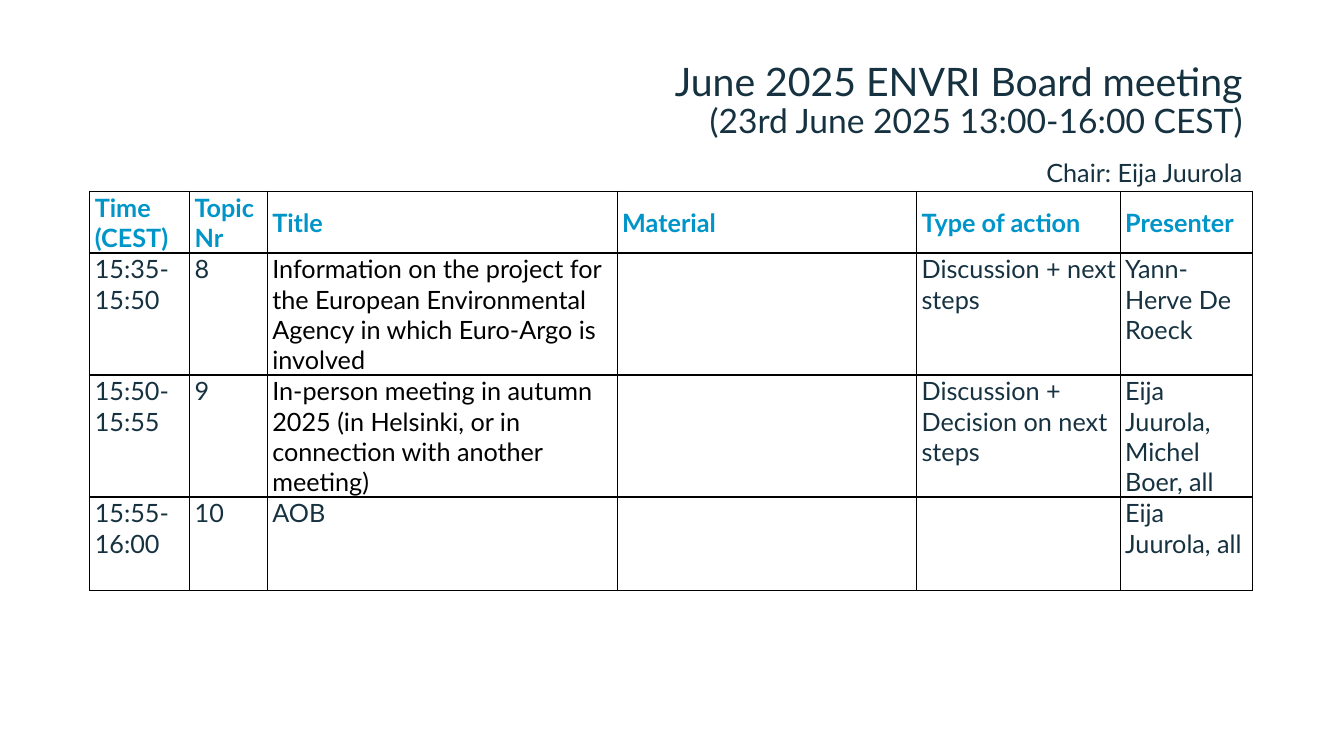
"""Build the agenda slide of the June 2025 board meeting."""
from typing import NamedTuple

import lxml.etree
import pptx
import pptx.dml.color
import pptx.enum.text
import pptx.oxml.ns
import pptx.util

SLIDE_WIDTH = pptx.util.Inches(13.33)
SLIDE_HEIGHT = pptx.util.Inches(7.5)
FONT = "Lato"
NAVY, BLUE, BLACK, WHITE = "163241", "0095C8", "000000", "FFFFFF"
TITLE_COLUMN = 2
COLUMN_SHARES = (7.43, 5.78, 26.03, 22.28, 15.15, 9.83)
ROW_SHARES = (7.73, 12.4, 12.4, 12.4)
BORDER_SIDES = ("a:lnL", "a:lnR", "a:lnT", "a:lnB")


class Heading(NamedTuple):
    left: float
    top: float
    width: float
    height: float
    text: str
    sizes: tuple[int, ...]
    line_spacing: float


class Topic(NamedTuple):
    time: str
    number: str
    title: str
    material: str
    action: str
    presenter: str
    title_color: str


HEADINGS = (
    Heading(28.96, 7.6, 64.22, 10.67,
            "June 2025 ENVRI Board meeting\v(23rd June 2025 13:00-16:00 CEST)",
            (28, 24), 0.9),
    Heading(68.42, 20.13, 24.76, 5.33, "Chair: Eija Juurola", (18,), 1.0),
)
TOPICS = (
    Topic("Time (CEST)", "Topic Nr", "Title", "Material", "Type of action",
          "Presenter", BLUE),
    Topic("15:35-15:50", "8",
          "Information on the project for the European Environmental Agency "
          "in which Euro-Argo is involved",
          "", "Discussion + next steps", "Yann-Herve De Roeck", BLACK),
    Topic("15:50-15:55", "9",
          "In-person meeting in autumn 2025 (in Helsinki, or in connection "
          "with another meeting)",
          "", "Discussion + Decision on next steps",
          "Eija Juurola, Michel Boer, all", BLACK),
    Topic("15:55-16:00", "10", "AOB", "", "", "Eija Juurola, all", NAVY),
)


def across(share: float) -> int:
    """Turn a percentage of the slide width into a length."""
    return round(SLIDE_WIDTH * share / 100)


def down(share: float) -> int:
    """Turn a percentage of the slide height into a length."""
    return round(SLIDE_HEIGHT * share / 100)


def rgb(value: str) -> pptx.dml.color.RGBColor:
    """Turn a hex string into a colour."""
    return pptx.dml.color.RGBColor.from_string(value)


def style_font(font, size: int, color: str, bold: bool = False) -> None:
    """Set the typeface, size, colour and weight of a font."""
    font.name = FONT
    font.size = pptx.util.Pt(size)
    font.bold = bold
    font.color.rgb = rgb(color)


def add_heading(page, heading: Heading) -> None:
    """Add a right-aligned text box with one size per line."""
    box = page.shapes.add_textbox(across(heading.left), down(heading.top),
                                  across(heading.width), down(heading.height))
    box.text_frame.word_wrap = True
    box.text_frame.text = heading.text
    para = box.text_frame.paragraphs[0]
    para.alignment = pptx.enum.text.PP_ALIGN.RIGHT
    para.line_spacing = heading.line_spacing
    for span, size in zip(para.runs, heading.sizes):
        style_font(span.font, size, NAVY)


def add_borders(cell) -> None:
    """Draw a thin black line on every side of a cell."""
    properties = cell._tc.get_or_add_tcPr()
    for side in BORDER_SIDES:
        line = lxml.etree.SubElement(properties, pptx.oxml.ns.qn(side),
                                     w=str(pptx.util.Pt(1)))
        fill = lxml.etree.SubElement(line, pptx.oxml.ns.qn("a:solidFill"))
        lxml.etree.SubElement(fill, pptx.oxml.ns.qn("a:srgbClr"), val=BLACK)


def fill_cell(cell, text: str, color: str, is_header: bool) -> None:
    """Write and format one cell of the agenda."""
    add_borders(cell)
    cell.fill.solid()
    cell.fill.fore_color.rgb = rgb(WHITE)
    cell.margin_left = cell.margin_right = pptx.util.Inches(0.01)
    cell.margin_top = pptx.util.Inches(0.01)
    cell.margin_bottom = 0
    anchor = pptx.enum.text.MSO_ANCHOR
    cell.vertical_anchor = anchor.MIDDLE if is_header else anchor.TOP
    cell.text_frame.text = text
    para = cell.text_frame.paragraphs[0]
    indents = para._p.get_or_add_pPr()
    indents.set("marL", str(pptx.util.Inches(0.04)))
    indents.set("indent", "0")
    style_font(para.font, 18, color, is_header)
    for span in para.runs:
        style_font(span.font, 18, color, is_header)


def add_agenda(page) -> None:
    """Add the agenda table with its header and topics."""
    table = page.shapes.add_table(
        len(TOPICS), len(COLUMN_SHARES), across(6.68), down(25.33),
        across(sum(COLUMN_SHARES)), down(sum(ROW_SHARES))).table
    table.first_row = table.horz_banding = False
    for column, share in zip(table.columns, COLUMN_SHARES):
        column.width = across(share)
    for row_index, (row, share, topic) in enumerate(
            zip(table.rows, ROW_SHARES, TOPICS)):
        row.height = down(share)
        is_header = row_index == 0
        base_color = BLUE if is_header else NAVY
        for column_index, cell in enumerate(row.cells):
            is_title = column_index == TITLE_COLUMN
            color = topic.title_color if is_title else base_color
            fill_cell(cell, topic[column_index], color, is_header)


def main() -> None:
    """Build the deck and save it."""
    deck = pptx.Presentation()
    deck.slide_width, deck.slide_height = SLIDE_WIDTH, SLIDE_HEIGHT
    page = deck.slides.add_slide(deck.slide_layouts[6])
    add_agenda(page)
    for heading in HEADINGS:
        add_heading(page, heading)
    deck.save("out.pptx")


if __name__ == "__main__":
    main()
